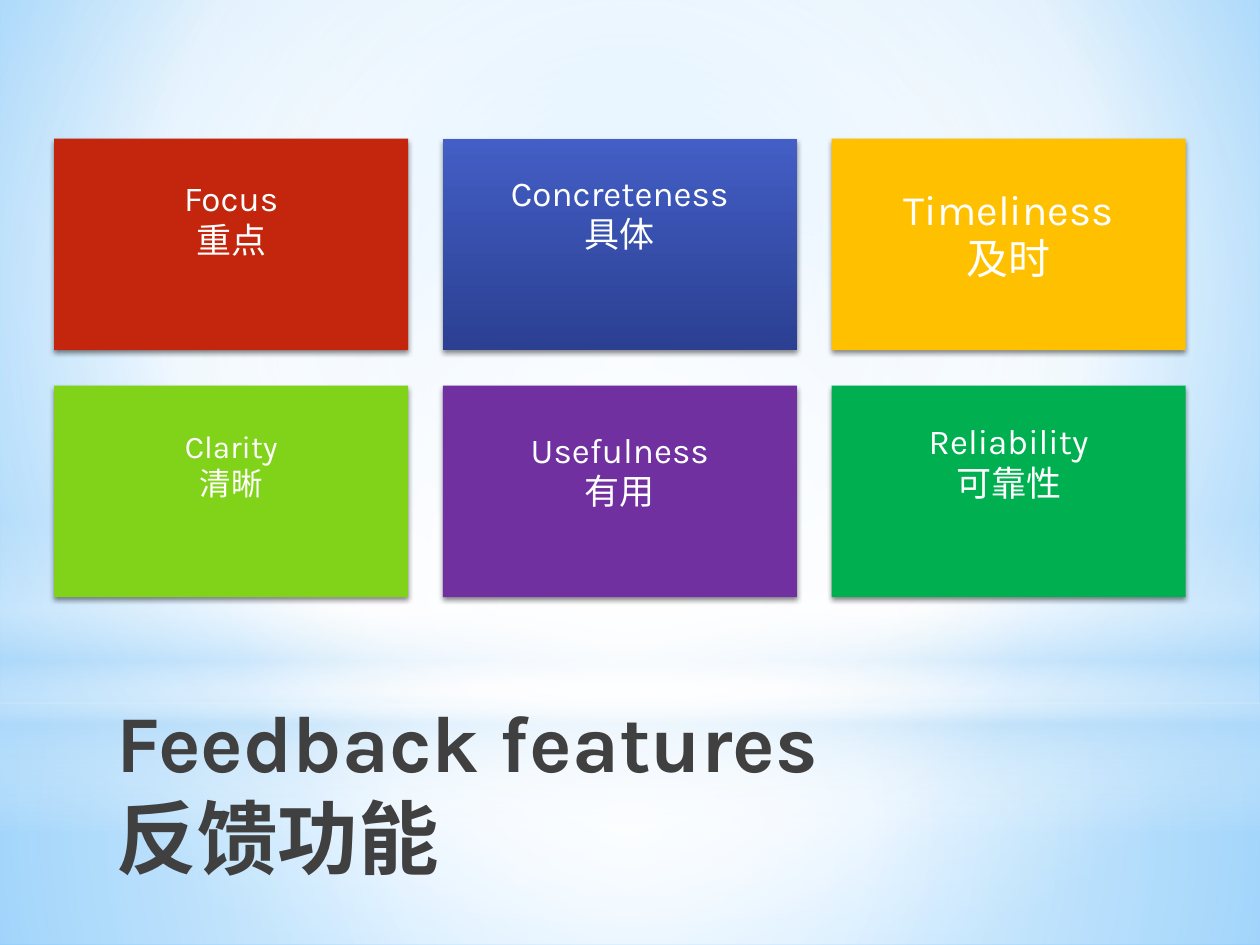
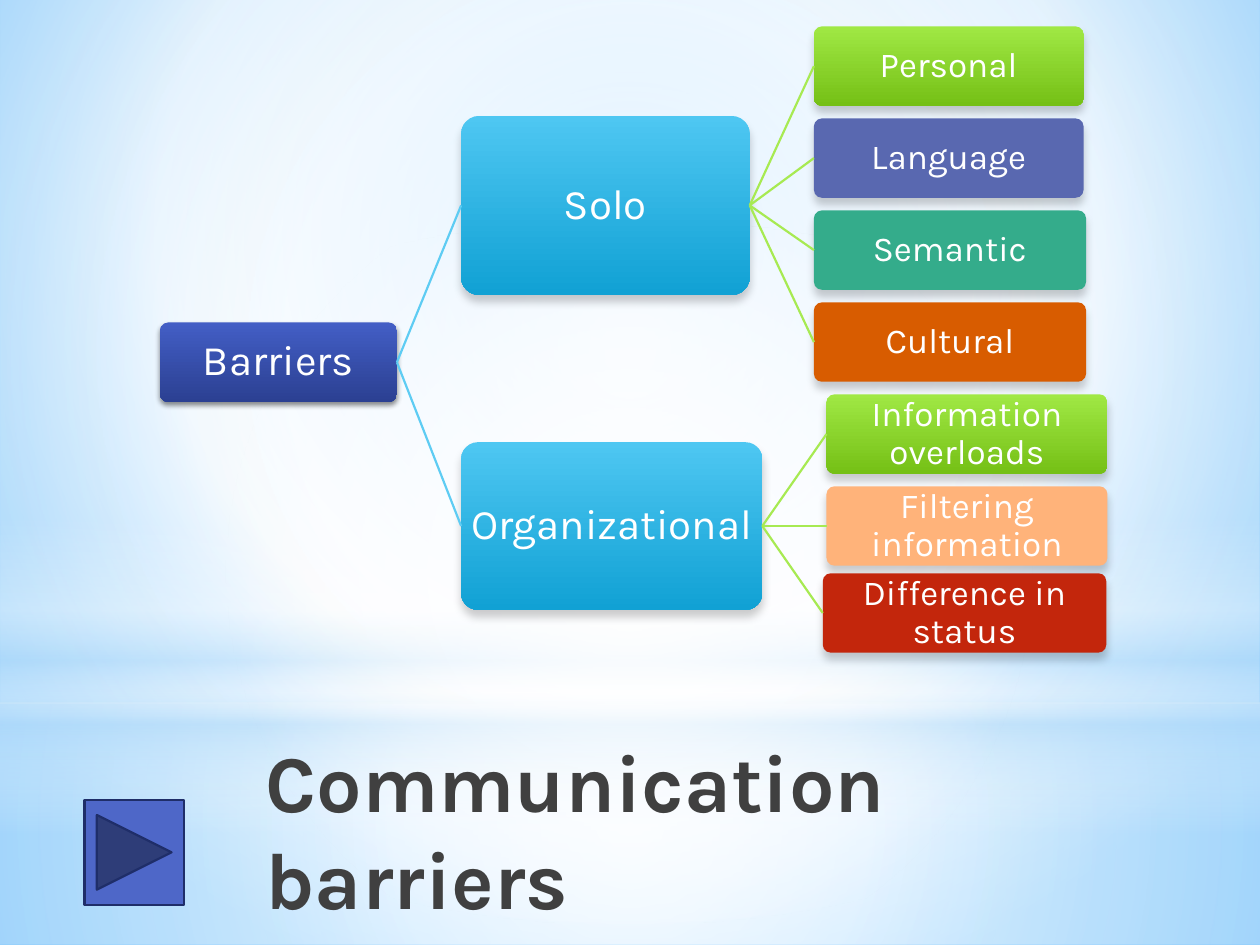
"""Build two training slides: feedback features and communication barriers."""
from lxml.etree import SubElement
from pptx import Presentation
from pptx.dml.color import RGBColor
from pptx.enum.shapes import MSO_CONNECTOR, MSO_SHAPE
from pptx.enum.text import MSO_ANCHOR, PP_ALIGN
from pptx.oxml.ns import qn
from pptx.util import Inches, Pt

WHITE = RGBColor(0xFF, 0xFF, 0xFF)
BLACK = RGBColor(0, 0, 0)
GREY = RGBColor(0x40, 0x40, 0x40)
SKY = RGBColor(0x9E, 0xD5, 0xFF)
AZURE = RGBColor(0x5B, 0xB9, 0xFF)
MIST = RGBColor(0xB4, 0xDC, 0xFA)
RED = RGBColor(0xC3, 0x26, 0x0C)
GOLD = RGBColor(0xFF, 0xC0, 0x00)
LIME = RGBColor(0x81, 0xD3, 0x1A)
PURPLE = RGBColor(0x70, 0x30, 0xA0)
GREEN = RGBColor(0x00, 0xB0, 0x50)
INDIGO = RGBColor(0x59, 0x68, 0xB0)
TEAL = RGBColor(0x34, 0xAC, 0x8B)
ORANGE = RGBColor(0xD8, 0x5C, 0x00)
PEACH = RGBColor(0xFF, 0xB3, 0x7A)
BLUE = RGBColor(0x4E, 0x67, 0xC8)
NAVY = RGBColor(0x1F, 0x2E, 0x69)
CYAN = RGBColor(0x5E, 0xCC, 0xF3)
LEAF = RGBColor(0xA7, 0xEA, 0x52)
ROYAL = [(0, RGBColor(0x43, 0x5E, 0xC5), 100), (100, RGBColor(0x2B, 0x40, 0x92), 100)]
AQUA = [(0, RGBColor(0x4E, 0xC7, 0xF2), 100), (100, RGBColor(0x11, 0xA1, 0xD4), 100)]
GRASS = [(0, RGBColor(0xA0, 0xE8, 0x44), 100), (100, RGBColor(0x75, 0xC0, 0x16), 100)]
FONT = "Karla"
CRISP = (45, 3.1, 1.8)
SOFT = (20, 5, 4)
MID = (50, 50, 50, 50)

deck = Presentation()
deck.slide_width, deck.slide_height = Inches(10), Inches(7.5)
COL = deck.slide_width / 100
ROW = deck.slide_height / 75


def grade(fill, root, stops, focus=None):
    """Fill with colour stops, downward or as circles around a focus."""
    fill.gradient()
    grad = next(root.iter(qn("a:gradFill")))
    for child in list(grad):
        grad.remove(child)
    chain = SubElement(grad, qn("a:gsLst"))
    for pos, tone, alpha in stops:
        stop = SubElement(chain, qn("a:gs"), pos=str(pos * 1000))
        hue = SubElement(stop, qn("a:srgbClr"), val=str(tone))
        SubElement(hue, qn("a:alpha"), val=str(alpha * 1000))
    if focus:
        ring = SubElement(grad, qn("a:path"), {"path": "circle"})
        sides = {side: str(share * 1000) for side, share in zip("ltrb", focus)}
        SubElement(ring, qn("a:fillToRect"), sides)
    else:
        SubElement(grad, qn("a:lin"), ang="5400000", scaled="0")


def box(slide, kind, spot, fill, focus=None, shade=None, lines=(), size=20, top=None):
    """Place a shape by columns and rows, with centred white text."""
    x, y, w, h = spot
    shape = slide.shapes.add_shape(kind, round(x * COL), round(y * ROW), round(w * COL), round(h * ROW))
    shape.shadow.inherit = False
    shape.line.fill.background()
    if isinstance(fill, RGBColor):
        shape.fill.solid()
        shape.fill.fore_color.rgb = fill
    else:
        grade(shape.fill, shape._element.spPr, fill, focus)
    if kind == MSO_SHAPE.ROUNDED_RECTANGLE:
        shape.adjustments[0] = 0.1
    if shade:
        alpha, blur, drop = shade
        glow = SubElement(shape._element.spPr.find(qn("a:effectLst")), qn("a:outerShdw"),
                          blurRad=str(Pt(blur)), dist=str(Pt(drop)), dir="5400000", rotWithShape="0")
        hue = SubElement(glow, qn("a:srgbClr"), val=str(BLACK))
        SubElement(hue, qn("a:alpha"), val=str(alpha * 1000))
    if lines:
        frame = shape.text_frame
        frame.word_wrap = True
        frame.margin_left = frame.margin_right = Inches(0.03)
        frame.margin_top = frame.margin_bottom = 0
        frame.vertical_anchor = MSO_ANCHOR.MIDDLE
        if top is not None:
            frame.vertical_anchor = MSO_ANCHOR.TOP
            frame.margin_top = round(top * ROW)
        frame.text = "\n".join(lines)
        for para in frame.paragraphs:
            para.alignment = PP_ALIGN.CENTER
            para.line_spacing = 0.9
            para.space_after = Pt(2 if len(lines) > 1 else 0)
            para.font.name, para.font.size = FONT, Pt(size)
            para.font.color.rgb = WHITE
    return shape


RECT, ROUND = MSO_SHAPE.RECTANGLE, MSO_SHAPE.ROUNDED_RECTANGLE
master = deck.slide_master
grade(master.background.fill, master._element,
      [(0, SKY, 100), (60, WHITE, 100), (100, AZURE, 100)], (20, 10, 20, 60))

BANDS = [
    (RECT, (0, 55.8, 100, 19.2), [(0, WHITE, 91), (37, WHITE, 76), (100, MIST, 79)], MID),
    (RECT, (0, 0, 100, 55.8), [(0, WHITE, 89), (48, WHITE, 62), (100, MIST, 79)], MID),
    (RECT, (0, 41.2, 100, 25), [(0, WHITE, 0), (29, WHITE, 30), (45, MIST, 40),
                                (55, WHITE, 26), (65, MIST, 60), (100, WHITE, 0)], None),
    (MSO_SHAPE.OVAL, (0, 17.5, 100, 55.8), [(0, WHITE, 100), (56, WHITE, 0)], MID),
]
TITLES = [
    ("Feedback features\v反馈功能", (8.3, 54, 83, 18.1)),
    ("Communication barriers", (20.1, 57.2, 71.2, 16)),
]
slides = []
for title, (x, y, w, h) in TITLES:
    slide = deck.slides.add_slide(deck.slide_layouts[6])
    for kind, spot, stops, focus in BANDS:
        box(slide, kind, spot, stops, focus)
    label = slide.shapes.add_textbox(round(x * COL), round(y * ROW), round(w * COL), round(h * ROW))
    frame = label.text_frame
    frame.word_wrap = True
    frame.margin_top = Inches(0.09)
    frame.text = title
    head = frame.paragraphs[0]
    head.font.name, head.font.size, head.font.bold = FONT, Pt(46), True
    head.font.color.rgb = GREY
    slides.append(slide)
traits, tree = slides

TILES = [
    ("Focus", "重点", RED, 20, 3.4),
    ("Concreteness", "具体", ROYAL, 20, 3),
    ("Timeliness", "及时", GOLD, 24, 4),
    ("Clarity", "清晰", LIME, 18, 3.6),
    ("Usefulness", "有用", PURPLE, 20, 3.8),
    ("Reliability", "可靠性", GREEN, 20, 3.1),
]
for i, (name, gloss, fill, size, top) in enumerate(TILES):
    row, col = divmod(i, 3)
    spot = (4.3 + 30.85 * col, 11 + 19.6 * row, 28.1, 16.8)
    box(traits, RECT, spot, fill, shade=CRISP, lines=(name, gloss), size=size, top=top)

TALL = 6.3
ROOT = (12.7, 25.6, 18.8, TALL)
BRANCHES = [
    ("Solo", (36.6, 9.2, 22.9, 14.2), [
        ("Personal", 64.6, 2.1, 21.4, GRASS),
        ("Language", 64.6, 9.4, 21.4, INDIGO),
        ("Semantic", 64.6, 16.7, 21.6, TEAL),
        ("Cultural", 64.6, 24, 21.6, ORANGE),
    ]),
    ("Organizational", (36.6, 35.1, 23.9, 13.3), [
        ("Information overloads", 65.6, 31.3, 22.3, GRASS),
        ("Filtering information", 65.6, 38.6, 22.3, PEACH),
        ("Difference in status", 65.3, 45.5, 22.5, RED),
    ]),
]
links = []
box(tree, ROUND, ROOT, ROYAL, shade=CRISP, lines=("Barriers",), size=24)
for name, spot, leaves in BRANCHES:
    box(tree, ROUND, spot, AQUA, shade=SOFT, lines=(name,), size=24)
    links.append((ROOT, spot, CYAN))
    for word, x, y, w, fill in leaves:
        leaf = (x, y, w, TALL)
        box(tree, ROUND, leaf, fill, shade=SOFT, lines=(word,))
        links.append((spot, leaf, LEAF))

for (ax, ay, aw, ah), (bx, by, bw, bh), tone in links:
    link = tree.shapes.add_connector(
        MSO_CONNECTOR.STRAIGHT, round((ax + aw) * COL), round((ay + ah / 2) * ROW),
        round(bx * COL), round((by + bh / 2) * ROW))
    link.line.color.rgb = tone
    link.line.width = Pt(1.25)
    SubElement(link._element.spPr, qn("a:effectLst"))

button = box(tree, MSO_SHAPE.ACTION_BUTTON_FORWARD_OR_NEXT, (6.7, 63.5, 7.9, 8.3), BLUE)
button.line.color.rgb = NAVY
button.line.width = Pt(1.25)

deck.save("out.pptx")
